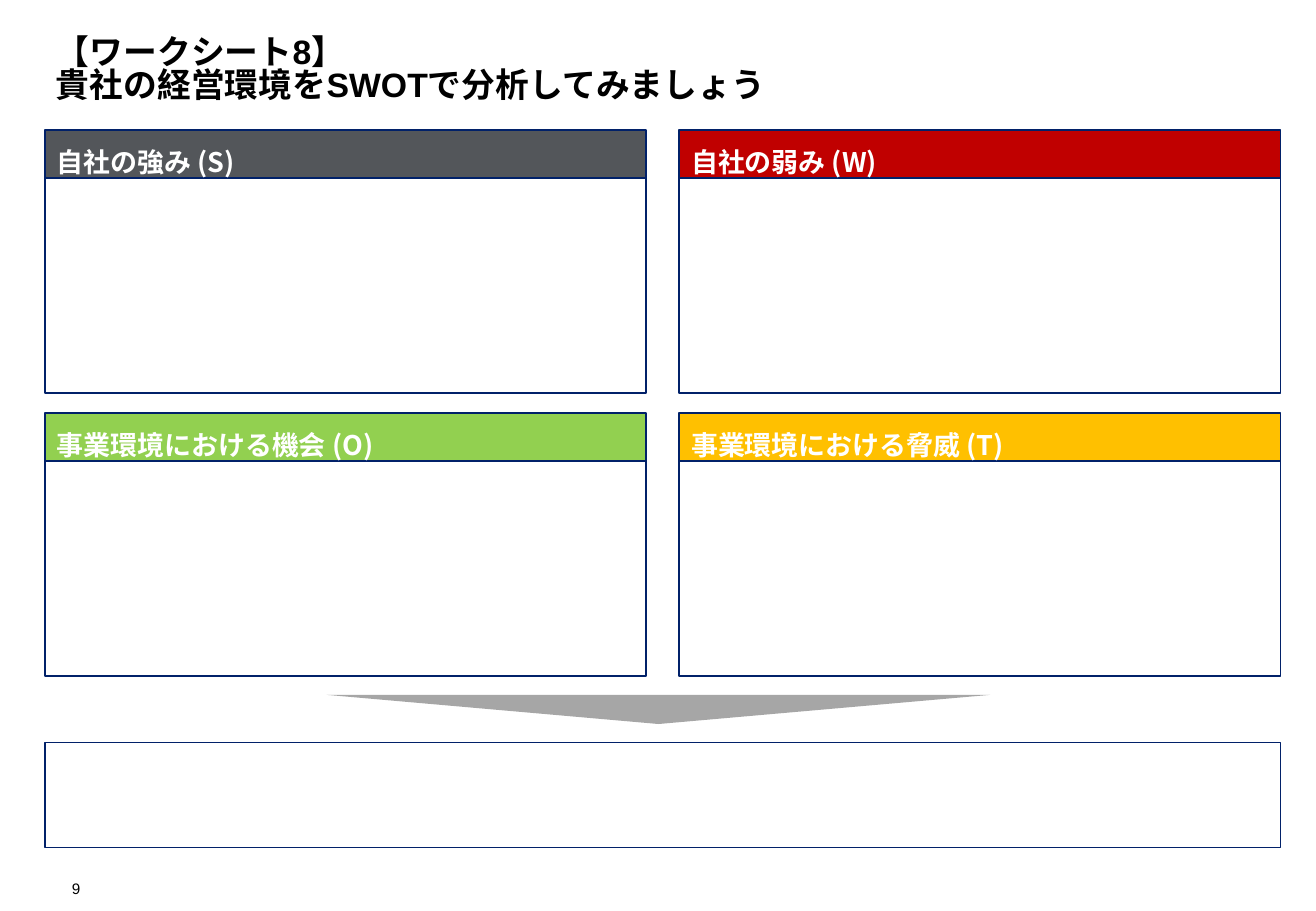
"""Build the SWOT analysis worksheet slide."""
from dataclasses import dataclass
from typing import Any, Optional

import pptx
import pptx.dml.color
import pptx.enum.shapes
import pptx.enum.text
import pptx.oxml.ns
import pptx.util
from lxml import etree

Cm, Pt = pptx.util.Cm, pptx.util.Pt
SHAPE = pptx.enum.shapes.MSO_SHAPE
ALIGN = pptx.enum.text.PP_ALIGN
ANCHOR = pptx.enum.text.MSO_ANCHOR


@dataclass(frozen=True)
class Theme:
    """Colours, fonts and type sizes of the slide."""
    line: str = "012169"
    arrow: str = "A6A6A6"
    white: str = "FFFFFF"
    black: str = "000000"
    latin: str = "Arial"
    cjk: str = "Noto Sans CJK JP"
    title_size: int = 20
    header_size: int = 16
    page_size: int = 9


@dataclass(frozen=True)
class Box:
    """A rectangle in centimetres."""
    left: float
    top: float
    width: float
    height: float

    def emu(self) -> list[int]:
        """Return the four lengths for python-pptx."""
        return [Cm(v) for v in (self.left, self.top, self.width, self.height)]


@dataclass(frozen=True)
class Quadrant:
    """One SWOT field: its heading, colour and grid place."""
    heading: str
    fill: str
    col: int
    row: int


THEME = Theme()
LEFT, TOP = 0.94, 2.72
COL_W, COL_STEP, ROW_STEP = 12.57, 13.26, 5.92
HEADER_H, BODY_H = 1.0, 4.5
QUADRANTS = [
    Quadrant("自社の強み (S)", "53565A", 0, 0),
    Quadrant("自社の弱み (W)", "C00000", 1, 0),
    Quadrant("事業環境における機会 (O)", "92D050", 0, 1),
    Quadrant("事業環境における脅威 (T)", "FFC000", 1, 1),
]


def apply(obj: Any, values: dict[str, Any]) -> None:
    """Set each attribute of obj from a dict."""
    for name, value in values.items():
        setattr(obj, name, value)


def rgb(colour: str) -> pptx.dml.color.RGBColor:
    """Turn a hex string into a colour."""
    return pptx.dml.color.RGBColor.from_string(colour)


def write(sp: Any, text: str, font: str, size: int, colour: str, bold: bool,
          frame: dict[str, Any], para: dict[str, Any]) -> None:
    """Put one formatted paragraph into a shape."""
    tf = sp.text_frame
    apply(tf, frame)
    p = tf.paragraphs[0]
    p.text = text
    apply(p, para)
    for r in p.runs:
        apply(r.font, {"name": font, "size": Pt(size), "bold": bold})
        r.font.color.rgb = rgb(colour)
        ea = etree.SubElement(r.font._element, pptx.oxml.ns.qn("a:ea"))
        ea.set("typeface", THEME.cjk)


def add_shape(s: Any, kind: Any, box: Box, fill: Optional[str] = None,
              line: Optional[float] = None) -> Any:
    """Add a flat shape with an optional fill and outline."""
    sp = s.shapes.add_shape(kind, *box.emu())
    sp.shadow.inherit = False
    if fill:
        sp.fill.solid()
        sp.fill.fore_color.rgb = rgb(fill)
    else:
        sp.fill.background()
    if line:
        sp.line.color.rgb = rgb(THEME.line)
        sp.line.width = Pt(line)
    else:
        sp.line.fill.background()
    return sp


def add_quadrant(s: Any, q: Quadrant) -> None:
    """Draw a heading bar above its empty field."""
    left, top = LEFT + q.col * COL_STEP, TOP + q.row * ROW_STEP
    add_shape(s, SHAPE.RECTANGLE, Box(left, top + HEADER_H, COL_W, BODY_H), line=1)
    sp = add_shape(s, SHAPE.RECTANGLE, Box(left, top, COL_W, HEADER_H), q.fill, 1)
    write(sp, q.heading, THEME.cjk, THEME.header_size, THEME.white, True,
          {"vertical_anchor": ANCHOR.MIDDLE, "word_wrap": True,
           "margin_left": Cm(0.25), "margin_right": Cm(0.2),
           "margin_top": Cm(0.13), "margin_bottom": Cm(0.13)},
          {"alignment": ALIGN.LEFT, "line_spacing": 1.5})


def main() -> None:
    """Build and save the slide."""
    prs = pptx.Presentation()
    apply(prs, {"slide_width": Cm(27.51), "slide_height": Cm(19.05)})
    s = prs.slides.add_slide(prs.slide_layouts[5])
    flush = {f"margin_{side}": 0 for side in ("left", "right", "top", "bottom")}
    flush |= {"vertical_anchor": ANCHOR.BOTTOM,
              "auto_size": pptx.enum.text.MSO_AUTO_SIZE.NONE}

    title = s.shapes.title
    apply(title, dict(zip(("left", "top", "width", "height"),
                          Box(1.17, 0.38, 25.2, 1.8).emu())))
    write(title, "【ワークシート8】\v貴社の経営環境をSWOTで分析してみましょう",
          THEME.latin, THEME.title_size, THEME.black, True,
          flush | {"word_wrap": True},
          {"alignment": ALIGN.LEFT, "line_spacing": 0.82})

    for q in QUADRANTS:
        add_quadrant(s, q)

    arrow = add_shape(s, SHAPE.ISOSCELES_TRIANGLE,
                      Box(6.83, 14.53, 13.87, 0.61), THEME.arrow)
    arrow.rotation = 180
    add_shape(s, SHAPE.RECTANGLE, Box(LEFT, 15.52, COL_STEP + COL_W, 2.21), line=0.75)

    page = s.shapes.add_textbox(*Box(1.17, 18.29, 0.51, 0.48).emu())
    write(page, "9", THEME.latin, THEME.page_size, THEME.black, False,
          flush | {"word_wrap": False}, {"alignment": ALIGN.RIGHT})
    prs.save("out.pptx")


if __name__ == "__main__":
    main()
